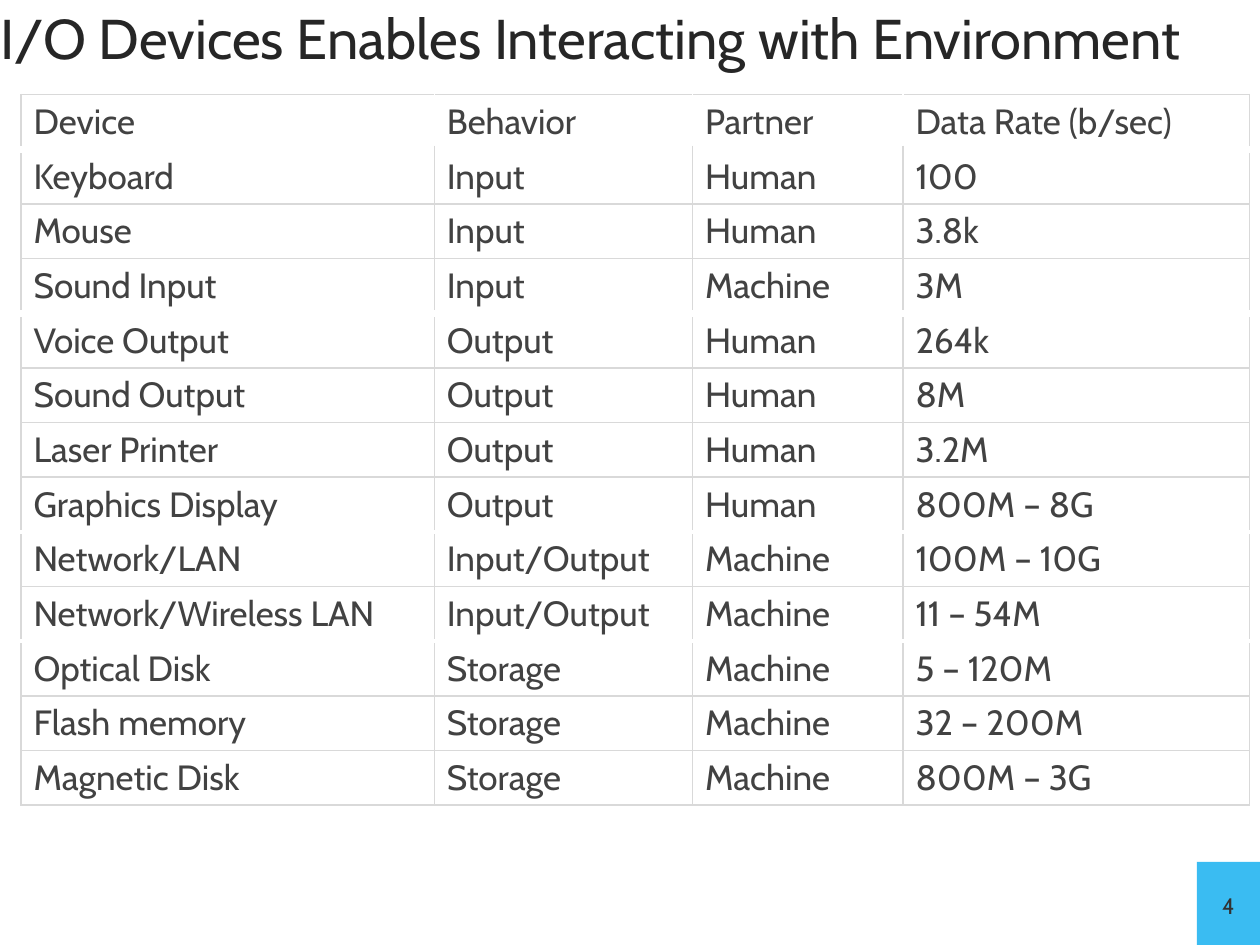
import pptx
import pptx.dml.color
import pptx.enum.shapes
import pptx.enum.text
import pptx.oxml
import pptx.oxml.ns
import pptx.util

Pt = pptx.util.Pt
FONT = "Cabin"
GREY, WHITE = "D9D9D9", "FFFFFF"

COLUMN_WIDTHS = [236.16, 147.6, 120.24, 198]
ROW_HEIGHT = 29.52
DEVICES = [
    ("Device", "Behavior", "Partner", "Data Rate (b/sec)"),
    ("Keyboard", "Input", "Human", "100"),
    ("Mouse", "Input", "Human", "3.8k"),
    ("Sound Input", "Input", "Machine", "3M"),
    ("Voice Output", "Output", "Human", "264k"),
    ("Sound Output", "Output", "Human", "8M"),
    ("Laser Printer", "Output", "Human", "3.2M"),
    ("Graphics Display", "Output", "Human", "800M – 8G"),
    ("Network/LAN", "Input/Output", "Machine", "100M – 10G"),
    ("Network/Wireless LAN", "Input/Output", "Machine", "11 – 54M"),
    ("Optical Disk", "Storage", "Machine", "5 – 120M"),
    ("Flash memory", "Storage", "Machine", "32 – 200M"),
    ("Magnetic Disk", "Storage", "Machine", "800M – 3G"),
]
# Width of the white rule below a row that closes a group
GROUP_RULES = {0: 4.5, 3: 4.5, 7: 3, 9: 3}


def color(value):
    return pptx.dml.color.RGBColor.from_string(value)


def write_text(text_frame, text, size, fill, align="LEFT", small_caps=False):
    paragraph = text_frame.paragraphs[0]
    paragraph.alignment = getattr(pptx.enum.text.PP_ALIGN, align)
    run = paragraph.add_run()
    run.text = text
    run.font.name = FONT
    run.font.size = Pt(size)
    run.font.color.rgb = color(fill)
    if small_caps:
        run._r.get_or_add_rPr().set("cap", "small")


def add_border(cell, side, fill, width):
    cell._tc.get_or_add_tcPr().append(pptx.oxml.parse_xml(
        f'<a:ln{side} {pptx.oxml.ns.nsdecls("a")} w="{Pt(width)}">'
        f'<a:solidFill><a:srgbClr val="{fill}"/></a:solidFill></a:ln{side}>'))


def add_title(slide, left, top, width, height):
    title = slide.shapes.title
    title.left, title.top, title.width, title.height = map(Pt, (left, top, width, height))
    frame = title.text_frame
    frame.margin_left = frame.margin_right = frame.margin_top = frame.margin_bottom = 0
    frame.vertical_anchor = pptx.enum.text.MSO_ANCHOR.MIDDLE
    frame.auto_size = pptx.enum.text.MSO_AUTO_SIZE.NONE
    frame.word_wrap = True
    write_text(frame, "I/O Devices Enables Interacting with Environment", 32, "262626")


def horizontal_rule(row):
    """Colour and width of the rule below the given row."""
    return (WHITE, GROUP_RULES[row]) if row in GROUP_RULES else (GREY, 1)


def add_device_table(slide, left, top, width, height):
    table = slide.shapes.add_table(
        len(DEVICES), len(COLUMN_WIDTHS), *map(Pt, (left, top, width, height))).table
    table.first_row = table.horz_banding = False
    for column, column_width in zip(table.columns, COLUMN_WIDTHS):
        column.width = Pt(column_width)
    last_column = len(COLUMN_WIDTHS) - 1
    for row_index, values in enumerate(DEVICES):
        table.rows[row_index].height = Pt(ROW_HEIGHT)
        # Header cells are parted by white instead of grey
        inner = WHITE if row_index == 0 else GREY
        for column_index, value in enumerate(values):
            cell = table.cell(row_index, column_index)
            add_border(cell, "L", GREY if column_index == 0 else inner, 1)
            add_border(cell, "R", GREY if column_index == last_column else inner, 1)
            add_border(cell, "T", *horizontal_rule(row_index - 1))
            add_border(cell, "B", *horizontal_rule(row_index))
            cell.fill.background()
            write_text(cell.text_frame, value, 20, "424242")


def add_page_number(slide, left, top, width, height):
    box = [Pt(length) for length in (left, top, width, height)]
    # Corner block
    block = slide.shapes.add_shape(pptx.enum.shapes.MSO_SHAPE.RECTANGLE, *box)
    block.shadow.inherit = False
    block.fill.solid()
    block.fill.fore_color.rgb = color("3ABCF2")
    block.line.fill.background()
    # Number
    frame = slide.shapes.add_textbox(*box).text_frame
    frame.word_wrap = False
    frame.vertical_anchor = pptx.enum.text.MSO_ANCHOR.MIDDLE
    write_text(frame, "4", 16, "323232", align="CENTER", small_caps=True)


def main():
    presentation = pptx.Presentation()
    presentation.slide_width, presentation.slide_height = Pt(720), Pt(540)
    slide = presentation.slides.add_slide(presentation.slide_layouts.get_by_name("Title Only"))
    add_page_number(slide, 684, 492.5, 36, 47.5)
    add_title(slide, 0, 0, 732, 42)
    add_device_table(slide, 12, 54, sum(COLUMN_WIDTHS), ROW_HEIGHT * len(DEVICES))
    presentation.save("out.pptx")


if __name__ == "__main__":
    main()
